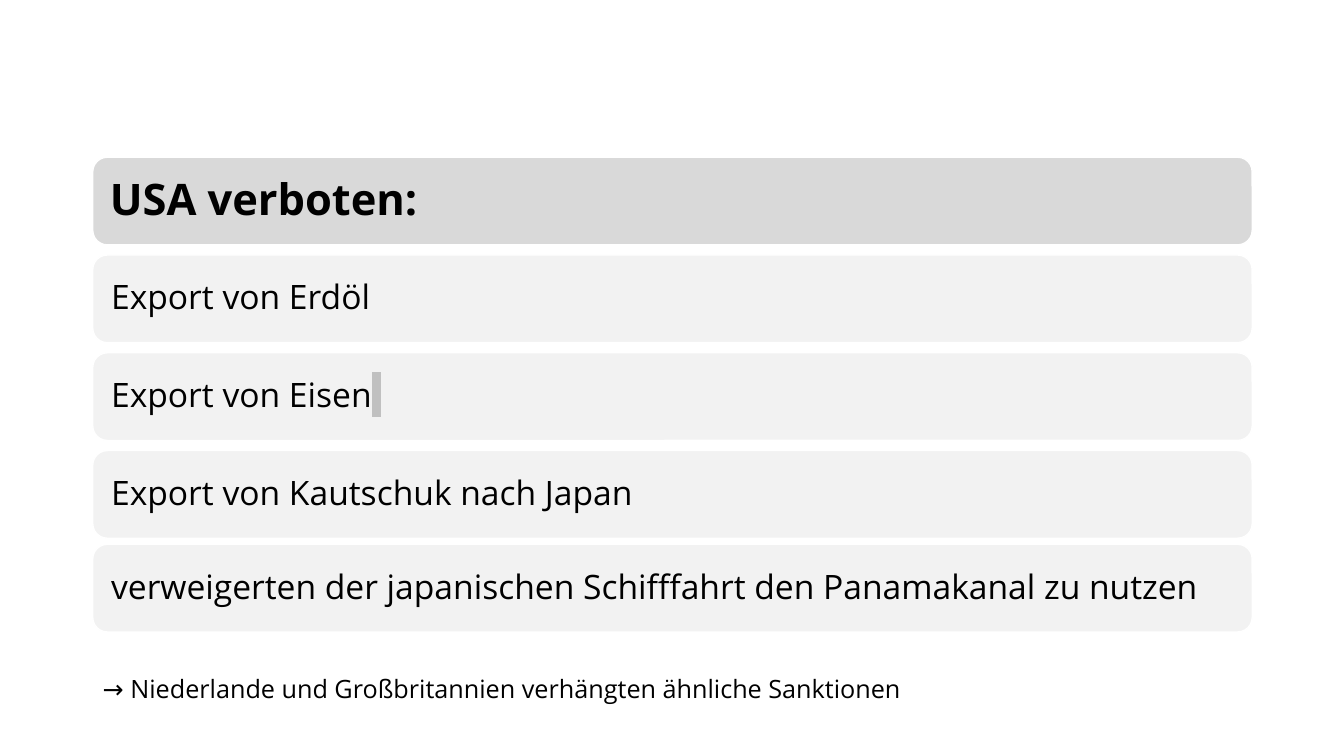
from dataclasses import dataclass

from lxml.etree import SubElement
from pptx import Presentation
from pptx.dml.color import RGBColor
from pptx.enum.shapes import MSO_SHAPE
from pptx.enum.text import MSO_ANCHOR, MSO_AUTO_SIZE, PP_ALIGN
from pptx.oxml.ns import qn
from pptx.util import Inches, Pt


@dataclass(frozen=True)
class Theme:
    font: str = "Open Sans"
    ink: str = "000000"
    paper: str = "FFFFFF"
    heading_fill: str = "D9D9D9"
    ban_fill: str = "F2F2F2"
    marker: str = "C0C0C0"
    heading_size: int = 31
    ban_size: int = 24
    note_size: int = 18


THEME = Theme()
SLIDE_WIDTH, SLIDE_HEIGHT = 13.33, 7.5

# Row grid, in inches
LEFT, TOP, WIDTH = 0.92, 1.56, 11.5
BAR_HEIGHT, ROW_PITCH = 0.87, 0.97
LAST_ROW_LIFT = 0.04

HEADING = "USA verboten:"
# Each ban is its wording and a highlighted ending
BANS = [
    ("Export von Erdöl", ""),
    ("Export von Eisen", " "),
    ("Export von Kautschuk nach Japan", ""),
    ("verweigerten der japanischen Schifffahrt den Panamakanal zu nutzen", ""),
]
NOTE = "→ Niederlande und Großbritannien verhängten ähnliche Sanktionen"


def write_text(holder, wording, *, size, bold=False, inset=(0.1, 0.05),
               anchor=MSO_ANCHOR.MIDDLE, spacing=0.9, marked=""):
    frame = holder.text_frame
    frame.auto_size = MSO_AUTO_SIZE.NONE
    frame.word_wrap = True
    frame.vertical_anchor = anchor
    frame.margin_left = frame.margin_right = Inches(inset[0])
    frame.margin_top = frame.margin_bottom = Inches(inset[1])
    paragraph = frame.paragraphs[0]
    paragraph.alignment = PP_ALIGN.LEFT
    paragraph.line_spacing = spacing
    for part in filter(None, (wording, marked)):
        run = paragraph.add_run()
        run.text = part
        run.font.size = Pt(size)
        run.font.bold = bold
        run.font.color.rgb = RGBColor.from_string(THEME.ink)
        if part == marked:
            highlight = SubElement(run.font._element, qn("a:highlight"))
            SubElement(highlight, qn("a:srgbClr"), val=THEME.marker)
        run.font.name = THEME.font


def add_bar(slide, box, fill):
    bar = slide.shapes.add_shape(MSO_SHAPE.ROUNDED_RECTANGLE, *map(Inches, box))
    bar.shadow.inherit = False
    bar.fill.solid()
    bar.fill.fore_color.rgb = RGBColor.from_string(fill)
    bar.line.color.rgb = RGBColor.from_string(THEME.paper)
    bar.line.width = Pt(1)
    return bar


def add_heading(slide, box):
    bar = add_bar(slide, box, THEME.heading_fill)
    title = slide.shapes.title
    title.left, title.top, title.width, title.height = map(Inches, box)
    write_text(title, HEADING, size=THEME.heading_size, bold=True,
               inset=(0.17, 0.17))
    # Bring the title in front of its bar
    bar._element.addnext(title._element)


def add_bans(slide, box):
    left, top, width, height = box
    for row, (wording, marked) in enumerate(BANS):
        lift = LAST_ROW_LIFT if row == len(BANS) - 1 else 0
        bar = add_bar(slide, (left, top + row * ROW_PITCH - lift, width, height),
                      THEME.ban_fill)
        write_text(bar, wording, size=THEME.ban_size, inset=(0.14, 0.14),
                   marked=marked)


def add_note(slide, box):
    note = slide.shapes.add_textbox(*map(Inches, box))
    write_text(note, NOTE, size=THEME.note_size, anchor=MSO_ANCHOR.TOP, spacing=1.0)


def main():
    deck = Presentation()
    deck.slide_width, deck.slide_height = Inches(SLIDE_WIDTH), Inches(SLIDE_HEIGHT)
    slide = deck.slides.add_slide(deck.slide_layouts.get_by_name("Title Only"))
    slide.background.fill.solid()
    slide.background.fill.fore_color.rgb = RGBColor.from_string(THEME.paper)

    # Heading, rows of bans, closing note
    add_heading(slide, (LEFT, TOP, WIDTH, BAR_HEIGHT))
    add_bans(slide, (LEFT, TOP + ROW_PITCH, WIDTH, BAR_HEIGHT))
    add_note(slide, (LEFT, 6.63, 8.86, 0.4))
    deck.save("out.pptx")


if __name__ == "__main__":
    main()
